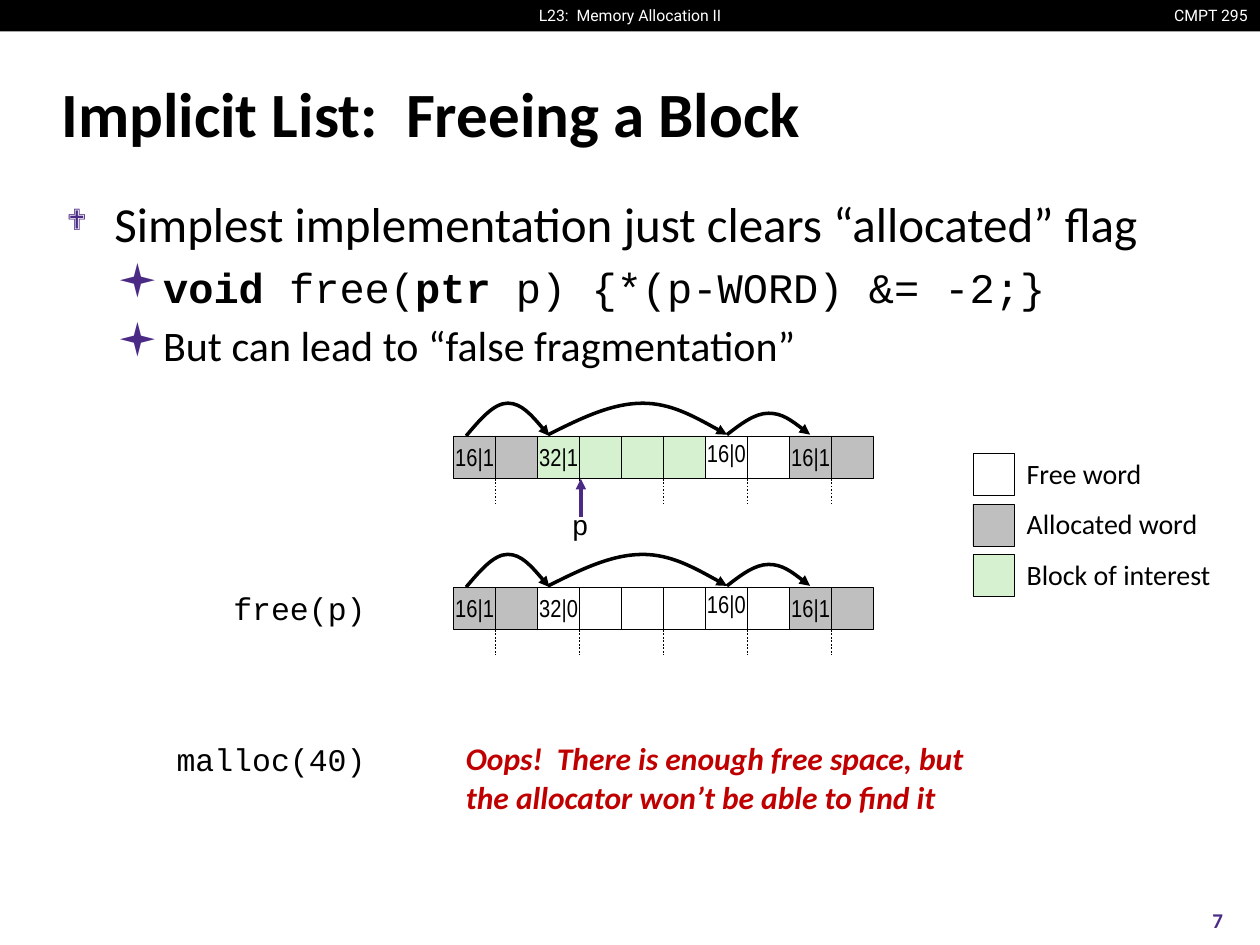
import pptx
import pptx.dml.color
import pptx.enum.dml
import pptx.enum.shapes
import pptx.enum.text
import pptx.oxml
import pptx.oxml.ns
import pptx.util

Inches, Pt = pptx.util.Inches, pptx.util.Pt
RGB = pptx.dml.color.RGBColor
ALIGN = pptx.enum.text.PP_ALIGN
ANCHOR = pptx.enum.text.MSO_ANCHOR
RECT = pptx.enum.shapes.MSO_SHAPE.RECTANGLE
LINE = pptx.enum.shapes.MSO_CONNECTOR.STRAIGHT
DOTS = pptx.enum.dml.MSO_LINE.ROUND_DOT

BLACK = RGB(0x00, 0x00, 0x00)
WHITE = RGB(0xFF, 0xFF, 0xFF)
GRAY = RGB(0xBF, 0xBF, 0xBF)
GREEN = RGB(0xD5, 0xF1, 0xCF)
PURPLE = RGB(0x4B, 0x2A, 0x85)
RED = RGB(0xC0, 0x00, 0x00)
MONO, NARROW = "Courier New", "Arial Narrow"

# Content
TITLE = "Implicit List:  Freeing a Block"
# Bullets: level, font, size, runs of (text, bold)
POINTS = [
    (0, "Calibri", 28,
     [("Simplest implementation just clears “allocated” flag", False)]),
    (1, MONO, 24, [("void", True), (" free(", False), ("ptr", True),
                   (" p) {*(p-WORD) &= -2;}", False)]),
    (1, "Calibri", 24, [("But can lead to “false fragmentation”", False)]),
]
# Bullet levels: sign, size in percent, text indent, hanging indent
LEVELS = [("❖", 60, 0.38, 0.38), ("▪", 110, 0.71, 0.31)]
# Heaps: top, fill of each word, header of each block by word
HEAPS = [
    (3.46, [GRAY] * 2 + [GREEN] * 4 + [None] * 2 + [GRAY] * 2,
     {0: "16|1", 2: "32|1", 6: "16|0", 8: "16|1"}),
    (4.66, [GRAY] * 2 + [None] * 6 + [GRAY] * 2,
     {0: "16|1", 2: "32|0", 6: "16|0", 8: "16|1"}),
]
# Hops: start, peak and end x, rise, gap above the words
HOPS = [(4.35, 5.1, 5.77, 0.25, 0.01), (5.77, 6.1, 6.43, 0.17, 0.01),
        (3.7, 4.03, 4.36, 0.26, 0)]
LEGEND = [("Free word", WHITE), ("Allocated word", GRAY),
          ("Block of interest", GREEN)]
CALLS = [("free(p)", 4.66), ("malloc(40)", 5.86)]
LEFT, WORD = 3.6, 1 / 3

deck = pptx.Presentation()
deck.slide_width, deck.slide_height = Inches(10), Inches(7.5)
page = deck.slides.add_slide(deck.slide_layouts[6])
shapes = page.shapes


def style(run, size, font, color, bold=False, slant=False):
    run.font.size, run.font.name = Pt(size), font
    run.font.color.rgb = color
    run.font.bold, run.font.italic = bold, slant


def write(text, box=None, shape=None, size=16, font="Calibri", color=BLACK,
          bold=False, slant=False, align=ALIGN.LEFT, anchor=ANCHOR.TOP,
          inset=(0.1, 0.05), wrap=True, pitch=None):
    """Put text in a given shape, or in a new text box."""
    shape = shape or shapes.add_textbox(*map(Inches, box))
    frame = shape.text_frame
    frame.word_wrap, frame.vertical_anchor = wrap, anchor
    frame.margin_left = frame.margin_right = Inches(inset[0])
    frame.margin_top = frame.margin_bottom = Inches(inset[1])
    para = frame.paragraphs[0]
    para.alignment, para.line_spacing = align, pitch
    run = para.add_run()
    run.text = text
    style(run, size, font, color, bold, slant)


def rect(x, y, w, h, fill, edge=BLACK):
    shape = shapes.add_shape(RECT, *map(Inches, (x, y, w, h)))
    shape.shadow.inherit = False
    if fill is None:
        shape.fill.background()
    else:
        shape.fill.solid()
        shape.fill.fore_color.rgb = fill
    if edge is None:
        shape.line.fill.background()
    else:
        shape.line.color.rgb, shape.line.width = edge, Pt(0.25)
    return shape


def add(parent, tag, **attrs):
    node = pptx.oxml.parse_xml(
        f"<{tag} {pptx.oxml.ns.nsdecls('a')}/>")
    for key, value in attrs.items():
        node.set(key, value)
    parent.append(node)
    return node


def stroke(shape, color, width, head=False):
    shape.line.color.rgb, shape.line.width = color, Pt(width)
    if head:
        add(shape.line._get_or_add_ln(), "a:tailEnd", type="triangle")


def link(x, y, x2, y2, color, width, head=False, dash=None):
    line = shapes.add_connector(LINE, *map(Inches, (x, y, x2, y2)))
    stroke(line, color, width, head)
    if dash:
        line.line.dash_style = dash
    add(line._element.spPr, "a:effectLst")


def hop(x, peak, end, rise, base):
    """Draw an arrow over the words as two joined cubic curves."""
    up, down = (peak - x) / 3, (end - peak) / 3
    spots = [(x + up, rise / 2), (x + 2 * up, rise), (peak, rise),
             (peak + down, rise), (peak + 2 * down, rise / 2), (end, 0)]
    build = shapes.build_freeform(Inches(x), Inches(base))
    build.add_line_segments(
        [(Inches(px), Inches(base - py)) for px, py in spots], close=False)
    curve = build.convert_to_shape()
    # Turn each three line ends into the points of one cubic curve
    ends = list(curve._element.iter(pptx.oxml.ns.qn("a:lnTo")))
    track = ends[0].getparent()
    for i in range(0, len(ends), 3):
        cubic = add(track, "a:cubicBezTo")
        for node in ends[i:i + 3]:
            cubic.append(node[0])
            track.remove(node)
    curve.shadow.inherit = False
    curve.fill.background()
    stroke(curve, BLACK, 2, head=True)


def heap(top, fills, heads):
    for i, fill in enumerate(fills):
        x = LEFT + i * WORD
        cell = rect(x, top, WORD, WORD, fill)
        look = dict(size=14, font=NARROW, align=ALIGN.CENTER, wrap=False)
        if heads.get(i) == "16|0":
            write(heads[i], (x - 0.09, top - 0.02, 0.51, 0.33),
                  pitch=0.98, **look)
        elif i in heads:
            write(heads[i], shape=cell, anchor=ANCHOR.MIDDLE,
                  inset=(0, 0), **look)
    for x, peak, end, rise, gap in HOPS:
        hop(x, peak, end, rise, top - gap)
    # Double-word boundaries
    for i in range(1, len(fills), 2):
        x = LEFT + i * WORD
        link(x, top + 0.34, x, top + 0.54, BLACK, 1, dash=DOTS)


# Header bar, title and page number
rect(0, 0, 10, 0.25, BLACK, edge=None)
bar = dict(size=9, font="Roboto", color=WHITE, wrap=False)
write("CMPT 295", (9.19, 0, 0.81, 0.25), align=ALIGN.RIGHT, **bar)
write("L23:  Memory Allocation II", (4.17, 0, 1.66, 0.25),
      align=ALIGN.CENTER, **bar)
write(TITLE, (0.39, 0.48, 9.19, 0.83), size=36, bold=True,
      anchor=ANCHOR.MIDDLE)
write("7", (9.33, 7.1, 0.67, 0.4), size=12, color=PURPLE, bold=True,
      align=ALIGN.CENTER, anchor=ANCHOR.MIDDLE)

# Bullets
body = shapes.add_textbox(*map(Inches, (0.43, 1.49, 9.15, 1.6))).text_frame
body.word_wrap = True
for n, (level, font, size, runs) in enumerate(POINTS):
    para = body.add_paragraph() if n else body.paragraphs[0]
    para.level, para.space_before = level, Pt(size * 0.2)
    sign, scale, indent, hang = LEVELS[level]
    props = para._p.get_or_add_pPr()
    props.set("marL", str(Inches(indent)))
    props.set("indent", str(-Inches(hang)))
    add(add(props, "a:buClr"), "a:srgbClr", val=str(PURPLE))
    add(props, "a:buSzPct", val=str(scale * 1000))
    add(props, "a:buFont", typeface="Wingdings", charset="2")
    add(props, "a:buChar", char=sign)
    for text, bold in runs:
        run = para.add_run()
        run.text = text
        style(run, size, font, BLACK, bold)

# Heaps before and after the call, with the pointer
for row in HEAPS:
    heap(*row)
write("p", (4.44, 4, 0.33, 0.36), font=MONO, align=ALIGN.CENTER, wrap=False,
      pitch=0.94)
link(4.61, 4.1, 4.61, 3.8, PURPLE, 2, head=True)

# Legend
for i, (name, fill) in enumerate(LEGEND):
    y = 3.6 + 0.4 * i
    rect(7.72, y, WORD, WORD, fill)
    write(name, (8.05, y, 1.8, WORD), anchor=ANCHOR.MIDDLE, inset=(0.1, 0),
          pitch=0.98)

# Calls and remark
for name, y in CALLS:
    write(name, (1, y, 2, WORD), size=18, font=MONO, align=ALIGN.RIGHT,
          anchor=ANCHOR.MIDDLE, inset=(0.1, 0))
write("Oops!  There is enough free space, but the allocator won’t be able "
      "to find it", (3.6, 5.86, 4.2, 0.67), size=18, color=RED, bold=True,
      slant=True, inset=(0.1, 0), pitch=1.02)

deck.save("out.pptx")
